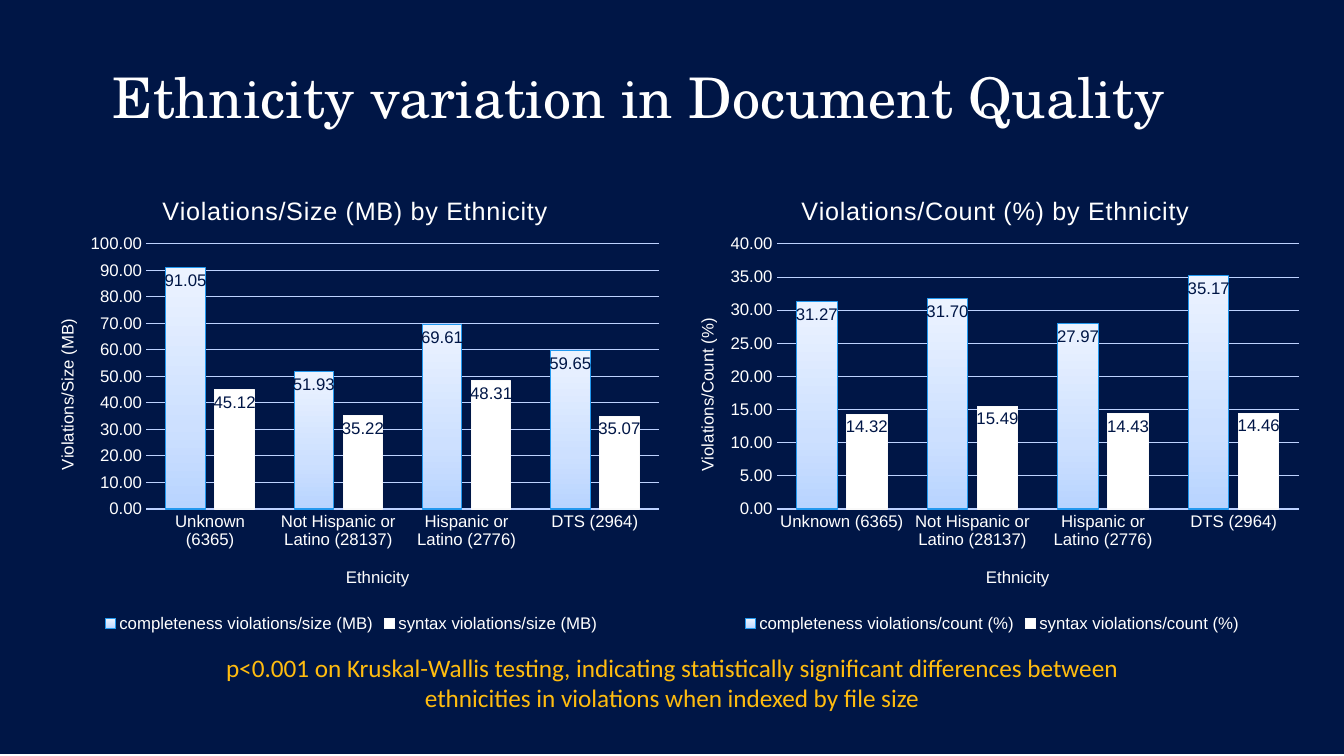
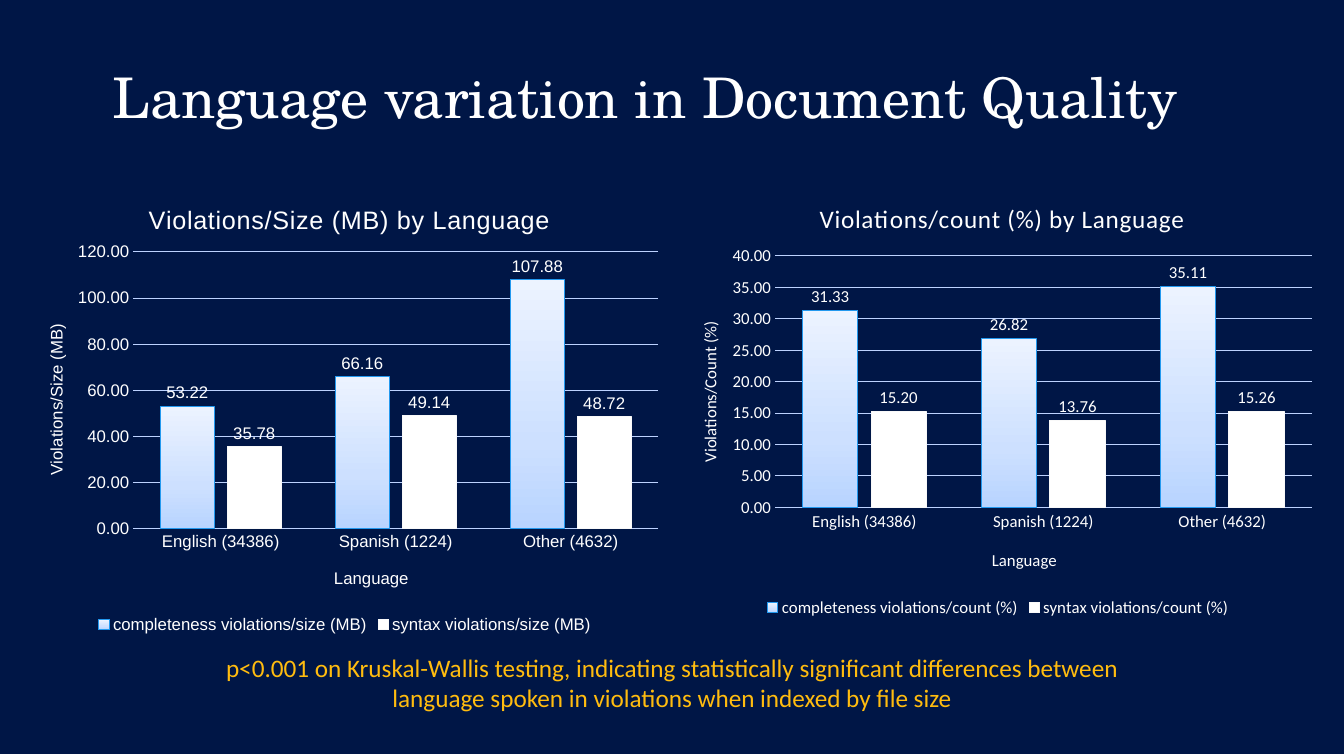
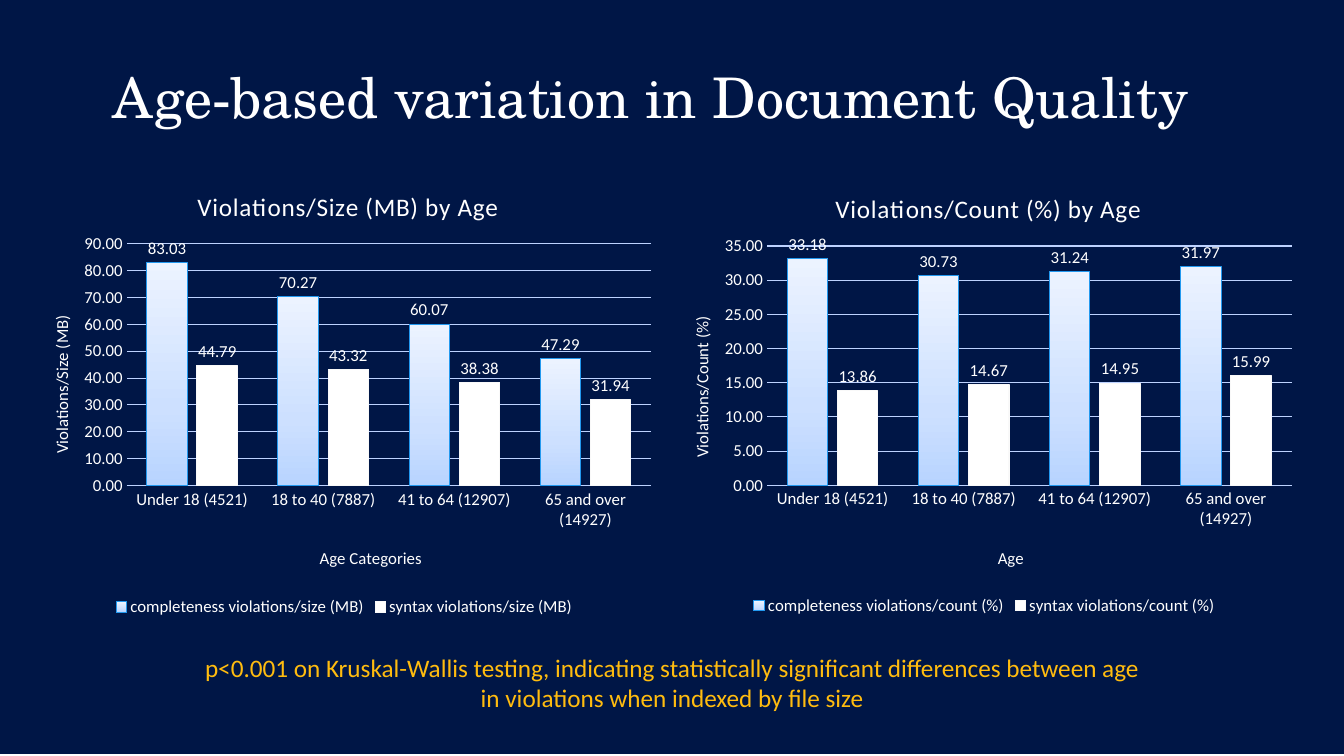
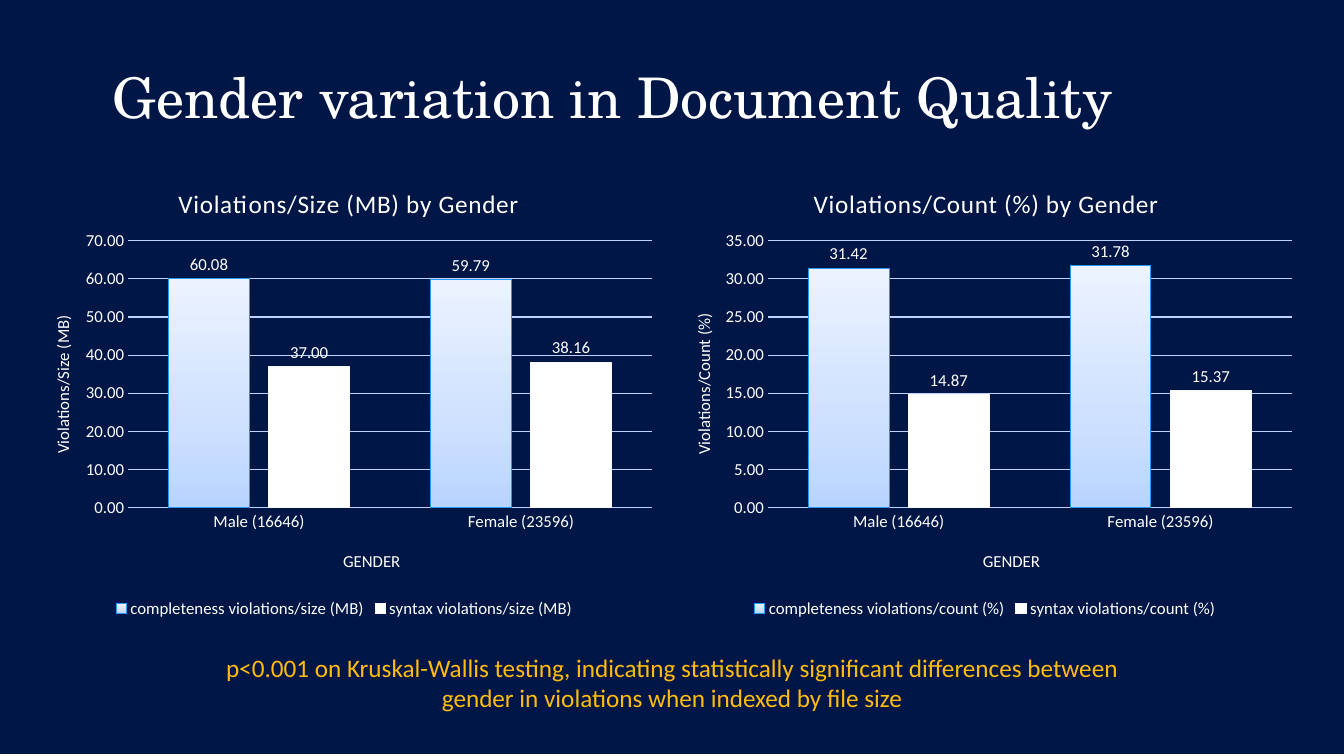
from copy import deepcopy

from lxml.etree import SubElement
from pptx import Presentation
from pptx.chart.data import CategoryChartData
from pptx.dml.color import RGBColor
from pptx.enum.chart import (XL_CHART_TYPE, XL_LABEL_POSITION,
                             XL_LEGEND_POSITION, XL_TICK_MARK)
from pptx.enum.shapes import MSO_SHAPE
from pptx.enum.text import MSO_ANCHOR, MSO_AUTO_SIZE, PP_ALIGN
from pptx.oxml.ns import qn
from pptx.util import Cm, Pt

NAVY = RGBColor(0x00, 0x16, 0x46)
WHITE = RGBColor(0xFF, 0xFF, 0xFF)
PEARL = RGBColor(0xF9, 0xF9, 0xF9)
GOLD = RGBColor(0xFF, 0xBC, 0x0F)
GRID = RGBColor(0xBD, 0xD2, 0xFF)
BLUE = RGBColor(0x23, 0x99, 0xEF)
SHADES = [(0, RGBColor(0xB8, 0xD4, 0xFF)),
          (0.35, RGBColor(0xCD, 0xE0, 0xFF)),
          (1, RGBColor(0xEC, 0xF3, 0xFF))]
SERIF, SANS, BODY = "TeX Gyre Schola", "Arial", "Calibri"
INSIDE, ABOVE = XL_LABEL_POSITION.INSIDE_END, XL_LABEL_POSITION.OUTSIDE_END
SIZE, COUNT = "Size (MB)", "Count (%)"

TOPICS = [
    {"title": "Ethnicity", "group": "ethnicities", "labels": INSIDE,
     "cats": ["Unknown (6365)", "Not Hispanic or Latino (28137)",
              "Hispanic or Latino (2776)", "DTS (2964)"],
     "charts": [
         {"unit": SIZE, "head": "Violations/Size (MB) by Ethnicity",
          "axis": "Ethnicity", "font": SANS,
          "box": (0.79, 4.19, 16.13, 11.86), "plot": (3.68, 6.15, 12.93, 6.68),
          "spots": [(3.98, 4.79), (8.64, 14.21), (1.36, 7.96)],
          "rows": [(91.05, 51.93, 69.61, 59.65), (45.12, 35.22, 48.31, 35.07)]},
         {"unit": COUNT, "head": "Violations/Count (%) by Ethnicity",
          "axis": "Ethnicity", "font": SANS,
          "box": (16.94, 4.19, 16.13, 11.86), "plot": (19.57, 6.15, 13.17, 6.68),
          "spots": [(20.08, 4.79), (24.77, 14.21), (17.49, 7.94)],
          "rows": [(31.27, 31.7, 27.97, 35.17), (14.32, 15.49, 14.43, 14.46)]}]},
    {"title": "Language", "group": "language spoken", "labels": ABOVE,
     "cats": ["English (34386)", "Spanish (1224)", "Other (4632)"],
     "charts": [
         {"unit": SIZE, "head": "Violations/Size (MB) by Language",
          "axis": "Language", "font": SANS,
          "box": (0.48, 4.39, 16.43, 11.68), "plot": (3.36, 6.35, 13.23, 6.98),
          "spots": [(3.63, 5), (8.34, 14.24), (1.08, 8.09)],
          "rows": [(53.22, 66.16, 107.88), (35.78, 49.14, 48.72)]},
         {"unit": COUNT, "head": "Violations/count (%) by Language",
          "axis": "Language", "font": BODY,
          "box": (16.94, 4.39, 16.43, 11.28), "plot": (19.53, 6.45, 13.53, 6.34),
          "spots": [(20.54, 4.97), (24.92, 13.75), (17.53, 8.01)],
          "rows": [(31.33, 26.82, 35.11), (15.2, 13.76, 15.26)]}]},
    {"title": "Age-based", "group": "age", "labels": ABOVE,
     "cats": ["Under 18 (4521)", "18 to 40 (7887)", "41 to 64 (12907)",
              "65 and over (14927)"],
     "charts": [
         {"unit": SIZE, "head": "Violations/Size (MB) by Age",
          "axis": "Age Categories", "font": BODY,
          "box": (0.61, 4.09, 16.13, 11.56), "plot": (3.19, 6.14, 13.22, 6.1),
          "spots": [(4.86, 4.66), (7.98, 13.69), (1.19, 7.87)],
          "rows": [(83.03, 70.27, 60.07, 47.29), (44.79, 43.32, 38.38, 31.94)]},
         {"unit": COUNT, "head": "Violations/Count (%) by Age",
          "axis": "Age", "font": BODY,
          "box": (16.74, 4.14, 16.13, 11.48), "plot": (19.33, 6.2, 13.22, 6.03),
          "spots": [(20.94, 4.71), (25.07, 13.69), (17.33, 7.9)],
          "rows": [(33.18, 30.73, 31.24, 31.97), (13.86, 14.67, 14.95, 15.99)]}]},
    {"title": "Gender", "group": "gender", "labels": ABOVE,
     "cats": ["Male (16646)", "Female (23596)"],
     "charts": [
         {"unit": SIZE, "head": "Violations/Size (MB) by Gender",
          "axis": "GENDER", "font": BODY,
          "box": (0.61, 4.01, 16.13, 11.68), "plot": (3.23, 6.07, 13.2, 6.72),
          "spots": [(4.38, 4.59), (8.57, 13.78), (1.22, 7.87)],
          "rows": [(60.08, 59.79), (37, 38.16)]},
         {"unit": COUNT, "head": "Violations/Count (%) by Gender",
          "axis": "GENDER", "font": BODY,
          "box": (16.76, 4.01, 16.13, 11.68), "plot": (19.35, 6.07, 13.2, 6.72),
          "spots": [(20.39, 4.59), (24.69, 13.78), (17.37, 7.82)],
          "rows": [(31.42, 31.78), (14.87, 15.37)]}]},
]


class Deck:
    def __init__(self):
        self.show = Presentation()
        self.show.slide_width, self.show.slide_height = Cm(33.87), Cm(19.05)
        self.base = self.show.slide_layouts[5]
        self.slide = None

    def start(self, text):
        self.slide = self.show.slides.add_slide(self.base)
        title = self.slide.shapes.title
        title.left, title.top, title.width, title.height = (
            Cm(2.59), Cm(0), Cm(30.58), Cm(3.4))
        frame = title.text_frame
        frame.text = text
        frame.auto_size = MSO_AUTO_SIZE.NONE
        frame.vertical_anchor = MSO_ANCHOR.BOTTOM
        frame.paragraphs[0].alignment = PP_ALIGN.LEFT
        self.style(frame.paragraphs[0].font, SERIF, 40)

    def band(self):
        band = self.slide.shapes.add_shape(
            MSO_SHAPE.RECTANGLE, 0, 0, self.show.slide_width, Cm(19))
        band.shadow.inherit = False
        band.fill.solid()
        band.fill.fore_color.rgb = NAVY
        band.line.fill.background()
        self.base.shapes.element.insert(2, band.element)

    def style(self, font, name, size, color=WHITE):
        font.name, font.size, font.bold = name, Pt(size), False
        font.color.rgb = color

    def note(self, text):
        box = self.slide.shapes.add_textbox(
            Cm(4.85), Cm(16.31), Cm(24.18), Cm(1.8))
        frame = box.text_frame
        frame.word_wrap = True
        frame.auto_size = MSO_AUTO_SIZE.SHAPE_TO_FIT_TEXT
        frame.text = text
        frame.paragraphs[0].alignment = PP_ALIGN.CENTER
        self.style(frame.paragraphs[0].font, BODY, 18, GOLD)

    def place(self, node, index, box, spot):
        for old in node.findall(qn("c:layout")):
            node.remove(old)
        layout = SubElement(node, qn("c:layout"))
        node.insert(index, layout)
        manual = SubElement(layout, qn("c:manualLayout"))
        left, top, width, height = box
        parts = [("xMode", "edge"), ("yMode", "edge"),
                 ("x", (spot[0] - left) / width),
                 ("y", (spot[1] - top) / height)]
        if len(spot) == 4:
            parts.insert(0, ("layoutTarget", "inner"))
            parts += [("w", spot[2] / width), ("h", spot[3] / height)]
        for tag, value in parts:
            SubElement(manual, qn("c:" + tag)).set("val", str(value))

    def label(self, title, text, name, size, box, spot):
        line = title.text_frame.paragraphs[0]
        run = line.add_run()
        run.text = text
        self.style(line.font, name, size)
        self.place(title.element, 1, box, spot)
        return run

    def paint(self, bars, fill, line):
        brush = bars.format.fill
        if fill is SHADES:
            brush.gradient()
            brush.gradient_angle = 90
            first = brush.gradient_stops[0]._gs
            first.addnext(deepcopy(first))
            for stop, (place, color) in zip(brush.gradient_stops, SHADES):
                stop.position, stop.color.rgb = place, color
        else:
            brush.solid()
            brush.fore_color.rgb = fill
        bars.invert_if_negative = False
        self.rule(bars.format.line, line)

    def rule(self, line, color):
        line.color.rgb, line.width = color, Pt(0.75)

    def chart(self, cats, labels, unit, head, axis, font, box, plot, spots, rows):
        data = CategoryChartData(number_format="0.00")
        data.categories = cats
        for kind, row in zip(("completeness", "syntax"), rows):
            data.add_series(f"{kind} violations/{unit.replace(unit[0], unit[0].lower(), 1)}", row)
        chart = self.slide.shapes.add_chart(
            XL_CHART_TYPE.COLUMN_CLUSTERED, *map(Cm, box), data).chart
        self.style(chart.font, font, 12)
        chart.has_title = chart.has_legend = True
        chart.legend.position = XL_LEGEND_POSITION.BOTTOM
        chart.legend.include_in_layout = False
        self.style(chart.legend.font, font, 12)
        across, up = chart.category_axis, chart.value_axis
        run = self.label(chart.chart_title, head, font, 18, box, spots[0])
        run._r.get_or_add_rPr().set("spc", "50")
        self.label(across.axis_title, axis, font, 12, box, spots[1])
        self.label(up.axis_title, "Violations/" + unit, font, 12, box, spots[2])
        for side in (across, up):
            side.major_tick_mark = side.minor_tick_mark = XL_TICK_MARK.NONE
            self.style(side.tick_labels.font, font, 12)
        self.rule(across.format.line, GRID)
        up.format.line.fill.background()
        self.rule(up.major_gridlines.format.line, GRID)
        up.tick_labels.number_format = "0.00"
        up.tick_labels.number_format_is_linked = False
        group = chart.plots[0]
        group.gap_width, group.overlap = 100, -24
        group.vary_by_categories = False
        for bars, look in zip(group.series, ((SHADES, BLUE), (WHITE, PEARL))):
            self.paint(bars, *look)
            tags = bars.data_labels
            tags.show_value, tags.position = True, labels
            tags.number_format, tags.number_format_is_linked = "0.00", False
            self.style(tags.font, font, 12, NAVY if labels == INSIDE else WHITE)
        self.place(chart.element.chart.plotArea, 0, box, plot)


def main():
    deck = Deck()
    for topic in TOPICS:
        deck.start(f"{topic['title']} variation in Document Quality")
        if topic is TOPICS[0]:
            deck.band()
        deck.note("p<0.001 on Kruskal-Wallis testing, indicating statistically "
                  f"significant differences between {topic['group']} in "
                  "violations when indexed by file size")
        for item in topic["charts"]:
            deck.chart(topic["cats"], topic["labels"], **item)
    deck.show.save("out.pptx")


if __name__ == "__main__":
    main()
